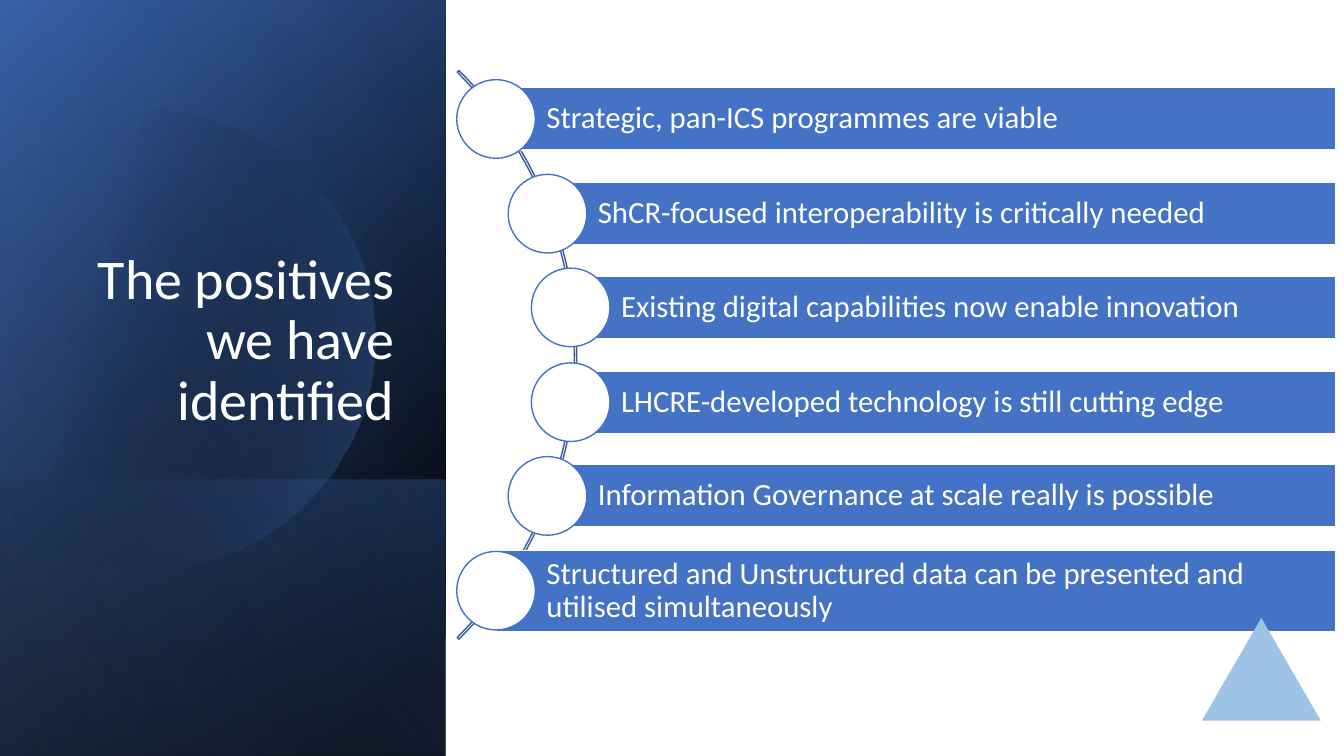
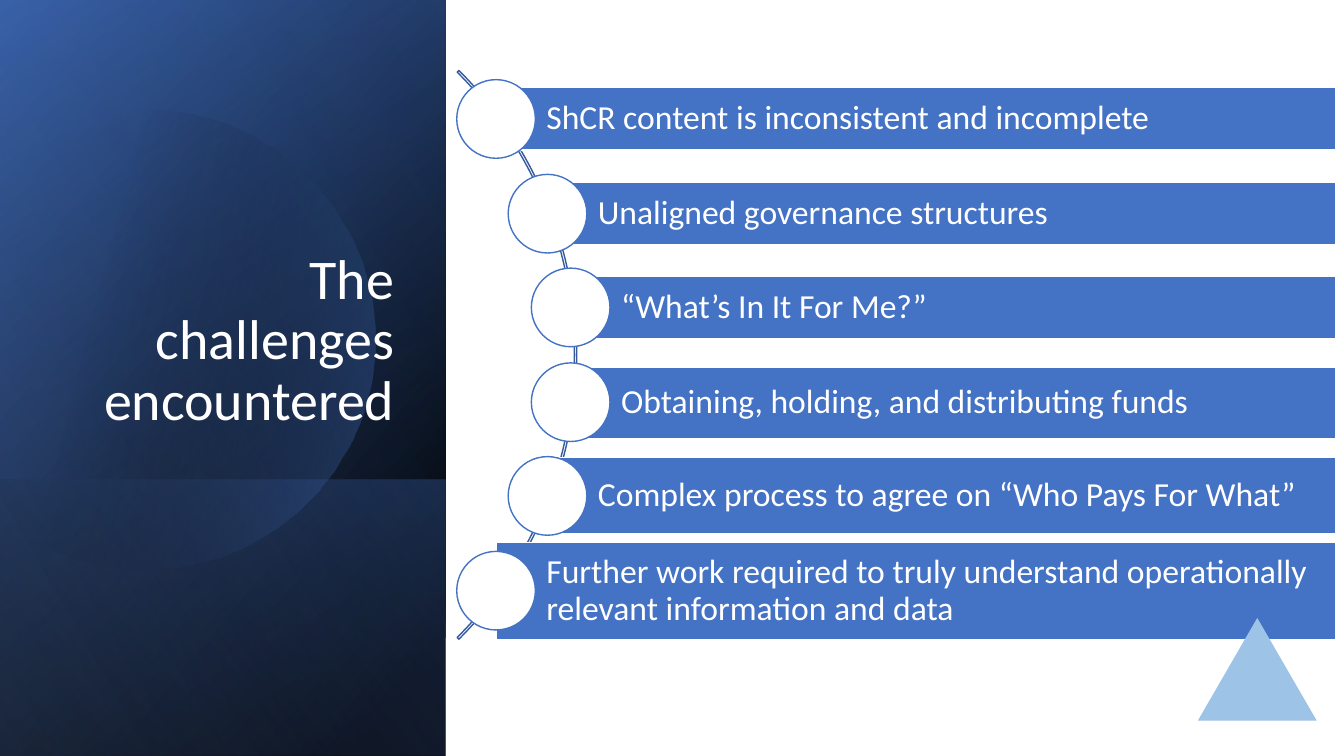
"""Build two list slides with a gradient title panel and circles along an arc."""
from math import cos, radians, sin

from lxml import etree
from pptx import Presentation
from pptx.dml.color import RGBColor
from pptx.enum.shapes import MSO_SHAPE
from pptx.enum.text import MSO_ANCHOR, MSO_AUTO_SIZE, PP_ALIGN
from pptx.oxml.ns import qn
from pptx.util import Pt

PX = 9144
RECTANGLE = MSO_SHAPE.RECTANGLE
OVAL = MSO_SHAPE.OVAL
BLOCK_ARC = MSO_SHAPE.BLOCK_ARC
TRIANGLE = MSO_SHAPE.ISOSCELES_TRIANGLE
LEFT, RIGHT = PP_ALIGN.LEFT, PP_ALIGN.RIGHT
MIDDLE, BOTTOM = MSO_ANCHOR.MIDDLE, MSO_ANCHOR.BOTTOM
NO_FIT = MSO_AUTO_SIZE.NONE

COLOURS = {
    "white": "FFFFFF",
    "black": "000000",
    "blue": "4472C4",
    "deep": "2F5597",
    "pale": "8FAADC",
    "arc": "365B9D",
    "emblem": "9DC3E6",
}
FONT = "Calibri"
PANEL_WIDTH = 442
DISC_SIZE = 78
BAR_RIGHT = 1325
FIRST_CENTRE, ROW_STEP = 118, 93.6
ROW_LEFTS = [492, 543, 566, 566, 543, 492]

PANEL_LAYERS = [
    (0, 750, 220, [(8, "black", 100), (100, "deep", 100)]),
    (0, 750, 240, [(0, "black", 0), (99, "blue", 46)]),
    (476, 274, 140, [(2, "blue", 29), (100, "black", 30)]),
]
GLOW_STOPS = [(29, "black", 0), (100, "blue", 43)]
SHEEN_LAYER = (0, 750, 150, [(0, "black", 0), (99, "pale", 11)])
GLOW_X, GLOW_Y, GLOW_RADIUS = 144, 337, 228
GLOW_POINTS = [
    (GLOW_X + GLOW_RADIUS * cos(radians(angle)), GLOW_Y + GLOW_RADIUS * sin(radians(angle)))
    for angle in range(-129, 130, 2)
]

SLIDES = [
    {
        "title": "The positives we have identified",
        "size": 22,
        "inset": 6,
        "emblem_left": 1192,
        "rows": [
            ("Strategic, pan-ICS programmes are viable", 62),
            ("ShCR-focused interoperability is critically needed", 62),
            ("Existing digital capabilities now enable innovation", 62),
            ("LHCRE-developed technology is still cutting edge", 62),
            ("Information Governance at scale really is possible", 62),
            ("Structured and Unstructured data can be presented and utilised simultaneously", 81),
        ],
    },
    {
        "title": "The challenges encountered",
        "size": 24,
        "inset": 7,
        "emblem_left": 1188,
        "rows": [
            ("ShCR content is inconsistent and incomplete", 62),
            ("Unaligned governance structures", 62),
            ("“What’s In It For Me?”", 62),
            ("Obtaining, holding, and distributing funds", 71),
            ("Complex process to agree on “Who Pays For What”", 76),
            ("Further work required to truly understand operationally relevant information and data", 97),
        ],
    },
]


def style_shape(shape, fill=None, line=None, stops=None, angle=0):
    """Set a solid, graded or empty fill and an optional outline."""
    shape.shadow.inherit = False
    shape.fill.background()
    shape.line.fill.background()
    if fill:
        shape.fill.solid()
        shape.fill.fore_color.rgb = RGBColor.from_string(COLOURS[fill])
    if line:
        shape.line.color.rgb = RGBColor.from_string(COLOURS[line])
        shape.line.width = Pt(1)
    if stops:
        properties = shape.element.spPr
        gradient = etree.Element(qn("a:gradFill"), rotWithShape="1")
        stop_list = etree.SubElement(gradient, qn("a:gsLst"))
        for position, name, opacity in stops:
            stop = etree.SubElement(stop_list, qn("a:gs"), pos=str(position * 1000))
            colour = etree.SubElement(stop, qn("a:srgbClr"), val=COLOURS[name])
            etree.SubElement(colour, qn("a:alpha"), val=str(opacity * 1000))
        etree.SubElement(gradient, qn("a:lin"), ang=str(angle * 60000), scaled="0")
        properties.replace(properties.find(qn("a:noFill")), gradient)


def write_text(shape, text, size, align, frame_format):
    """Write one white paragraph with the given frame settings."""
    frame = shape.text_frame
    frame.text = text
    for name, value in frame_format.items():
        setattr(frame, name, value)
    para = frame.paragraphs[0]
    for name, value in {"alignment": align, "line_spacing": 0.9}.items():
        setattr(para, name, value)
    span = para.runs[0]
    for name, value in {"name": FONT, "size": Pt(size), "bold": False}.items():
        setattr(span.font, name, value)
    span.font.color.rgb = RGBColor.from_string(COLOURS["white"])


deck = Presentation()
deck.slide_width, deck.slide_height = 1333 * PX, 750 * PX

for content in SLIDES:
    page = deck.slides.add_slide(deck.slide_layouts[5])
    shapes = page.shapes

    for top, height, angle, stops in PANEL_LAYERS:
        panel = shapes.add_shape(RECTANGLE, 0, top * PX, PANEL_WIDTH * PX, height * PX)
        style_shape(panel, stops=stops, angle=angle)

    builder = shapes.build_freeform(*GLOW_POINTS[0], scale=PX)
    builder.add_line_segments(GLOW_POINTS[1:], close=True)
    style_shape(builder.convert_to_shape(), stops=GLOW_STOPS, angle=14)

    top, height, angle, stops = SHEEN_LAYER
    sheen = shapes.add_shape(RECTANGLE, 0, top * PX, PANEL_WIDTH * PX, height * PX)
    style_shape(sheen, stops=stops, angle=angle)

    title = shapes.title
    title.element.getparent().append(title.element)
    for name, value in {"left": 51, "top": 64, "width": 350, "height": 370}.items():
        setattr(title, name, value * PX)
    title_format = {"vertical_anchor": BOTTOM, "word_wrap": True, "auto_size": NO_FIT}
    write_text(title, content["title"], 40, RIGHT, title_format)

    arc = shapes.add_shape(BLOCK_ARC, -226 * PX, -47 * PX, 798 * PX, 798 * PX)
    for index, value in enumerate([189, 27, 0.003]):
        arc.adjustments[index] = value
    style_shape(arc, line="arc")

    inset = content["inset"] * PX
    bar_format = {
        "vertical_anchor": MIDDLE,
        "word_wrap": True,
        "margin_left": 50 * PX,
        "margin_top": inset,
        "margin_right": inset,
        "margin_bottom": inset,
    }
    for index, (left, (text, height)) in enumerate(zip(ROW_LEFTS, content["rows"])):
        centre = FIRST_CENTRE + round(index * ROW_STEP)
        bar_top = centre - height // 2
        bar = shapes.add_shape(RECTANGLE, left * PX, bar_top * PX, (BAR_RIGHT - left) * PX, height * PX)
        style_shape(bar, fill="blue", line="white")
        write_text(bar, text, content["size"], LEFT, bar_format)
        disc_left, disc_top = left - DISC_SIZE // 2, centre - DISC_SIZE // 2
        disc = shapes.add_shape(OVAL, disc_left * PX, disc_top * PX, DISC_SIZE * PX, DISC_SIZE * PX)
        style_shape(disc, fill="white", line="blue")

    emblem = shapes.add_shape(TRIANGLE, content["emblem_left"] * PX, 613 * PX, 118 * PX, 102 * PX)
    style_shape(emblem, fill="emblem")

deck.save("out.pptx")
